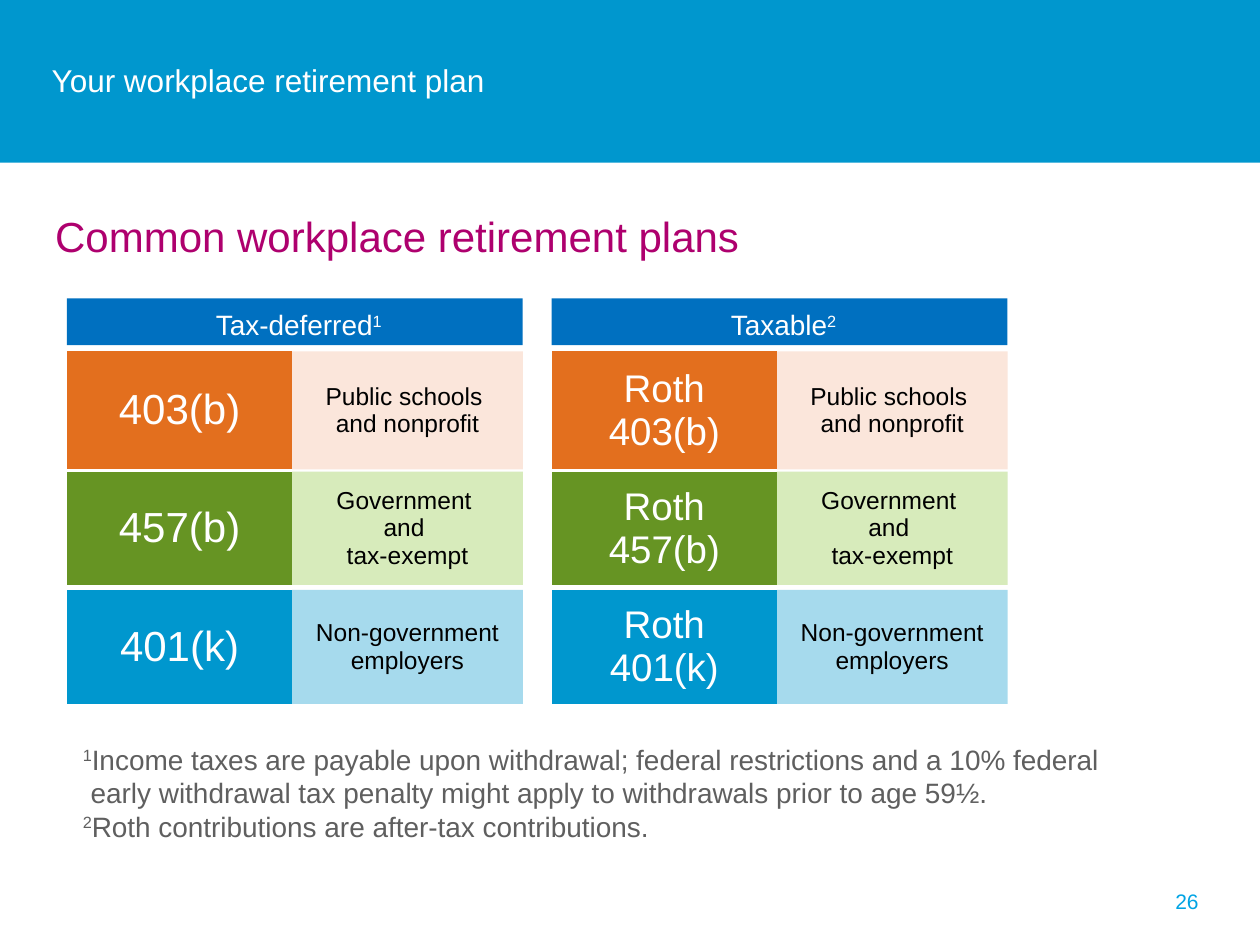
from lxml import etree
from pptx import Presentation
from pptx.dml.color import RGBColor
from pptx.enum import shapes, text
from pptx.oxml import ns
from pptx.util import Pt

COLORS = {
    "band": "0097CE", "white": "FFFFFF", "black": "000000", "heading": "AE006E",
    "header": "0070C0", "note": "5F5F5F", "number": "00A4E4",
    "orange": "E36F1E", "light orange": "ED834C",
    "green": "669423", "light green": "8DC63F",
}
NO_STYLE = "{2D5ABB26-0587-4C30-8999-92F81FD0307C}"
PLAN_W, GROUP_W = 128.75, 260.5
HEADER_H = 26.75

# top and height within a group, employers, plan fill, employer fill, opacity in %
ROWS = [
    (30.25, 67.5, "Public schools \vand nonprofit", "orange", "light orange", 20),
    (99, 64.75, "Government \vand \ntax-exempt", "green", "light green", 35),
    (166.5, 65.25, "Non-government employers", "band", "band", 35),
]
GROUPS = [
    (38.25, "Tax-deferred", "1", ["403(b)", "457(b)", "401(k)"], 24),
    (315.25, "Taxable", "2", ["Roth 403(b)", "Roth\n457(b)", "Roth 401(k)"], 22),
]
NOTES = [
    ("1", "Income taxes are payable upon withdrawal; federal restrictions and a 10% "
          "federal early withdrawal tax penalty might apply to withdrawals prior to "
          "age 59½."),
    ("2", "Roth contributions are after-tax contributions."),
]


def rgb(name):
    return RGBColor.from_string(COLORS[name])


def style(p, size, color, align=text.PP_ALIGN.LEFT):
    p.alignment = align
    p.font.name = "Arial"
    p.font.size = Pt(size)
    p.font.color.rgb = rgb(color)


def indent(p, left, first):
    pPr = p._p.get_or_add_pPr()
    pPr.set("marL", str(Pt(left)))
    pPr.set("indent", str(Pt(first)))


def add_run(p, words, raised=False):
    r = p.add_run()
    r.text = words
    if raised:
        r._r.get_or_add_rPr().set("baseline", "30000")


def add_rect(s, x, y, w, h, color):
    sp = s.shapes.add_shape(shapes.MSO_SHAPE.RECTANGLE, Pt(x), Pt(y), Pt(w), Pt(h))
    sp.shadow.inherit = False
    sp.fill.solid()
    sp.fill.fore_color.rgb = rgb(color)
    sp.line.fill.background()
    return sp


def add_textbox(s, x, y, w, h):
    tf = s.shapes.add_textbox(Pt(x), Pt(y), Pt(w), Pt(h)).text_frame
    tf.word_wrap = True
    return tf


def add_title_band(s, x, y, w, h):
    band = add_rect(s, x, y, w, h, "band")
    s.shapes._spTree.insert(2, band._element)  # behind the title
    title = s.shapes.title
    title.left, title.top = Pt(x + 29.5), Pt(y + 28)
    title.width, title.height = Pt(w - 57), Pt(35.25)
    tf = title.text_frame
    tf.text = "Your workplace retirement plan"
    tf.margin_left = 0
    tf.vertical_anchor = text.MSO_ANCHOR.MIDDLE
    style(tf.paragraphs[0], 18, "white")


def add_heading(s, x, y, w, h):
    tf = add_textbox(s, x, y, w, h)
    tf.margin_left = 0
    tf.text = "Common workplace retirement plans"
    style(tf.paragraphs[0], 24, "heading")


def fill_cell(cell, words, size, color, fill, opacity=100):
    cell.text = words
    cell.vertical_anchor = text.MSO_ANCHOR.MIDDLE
    cell.fill.solid()
    cell.fill.fore_color.rgb = rgb(fill)
    if opacity < 100:
        clr = cell._tc.tcPr.find(".//" + ns.qn("a:srgbClr"))
        etree.SubElement(clr, ns.qn("a:alpha")).set("val", str(opacity * 1000))
    for p in cell.text_frame.paragraphs:
        style(p, size, color, text.PP_ALIGN.CENTER)


def add_plan_row(s, x, y, w, h, plan, size, employers, dark, light, opacity):
    table = s.shapes.add_table(1, 2, Pt(x), Pt(y), Pt(w), Pt(h)).table
    table.first_row = table.horz_banding = False
    table._tbl.tblPr.find(ns.qn("a:tableStyleId")).text = NO_STYLE
    table.columns[0].width = Pt(PLAN_W)
    table.columns[1].width = Pt(w - PLAN_W)
    fill_cell(table.cell(0, 0), plan, size, "white", dark)
    fill_cell(table.cell(0, 1), employers, 14, "black", light, opacity)


def add_plan_group(s, x, y, w, name, mark, plans, size):
    """Header bar with one plan row per employer type below it."""
    tf = add_rect(s, x, y, w, HEADER_H, "header").text_frame
    tf.word_wrap = True
    tf.vertical_anchor = text.MSO_ANCHOR.TOP
    p = tf.paragraphs[0]
    indent(p, 18, -13.5)
    p.line_spacing = 1.1
    style(p, 16, "white", text.PP_ALIGN.CENTER)
    add_run(p, name)
    add_run(p, mark, raised=True)
    for plan, (top, h, *look) in zip(plans, ROWS):
        add_plan_row(s, x, y + top, w, h, plan, size, *look)


def add_notes(s, x, y, w, h):
    tf = add_textbox(s, x, y, w, h)
    for i, (mark, words) in enumerate(NOTES):
        p = tf.add_paragraph() if i else tf.paragraphs[0]
        indent(p, 4.5, -4.5)
        style(p, 16, "note")
        add_run(p, mark, raised=True)
        add_run(p, words)


def add_page_number(s, x, y, w, h):
    tf = add_textbox(s, x, y, w, h)
    tf.vertical_anchor = text.MSO_ANCHOR.MIDDLE
    tf.text = "26"
    style(tf.paragraphs[0], 12, "number", text.PP_ALIGN.RIGHT)


def main():
    prs = Presentation()
    prs.slide_width, prs.slide_height = Pt(720), Pt(540)
    s = prs.slides.add_slide(prs.slide_layouts[5])
    add_title_band(s, 0, 0, 720, 93)
    add_heading(s, 31.5, 116.75, 659.5, 40)
    for x, *group in GROUPS:
        add_plan_group(s, x, 170.5, GROUP_W, *group)
    add_notes(s, 40.25, 420.5, 595.5, 65.5)
    add_page_number(s, 524, 500.5, 168, 28.75)
    prs.save("out.pptx")


if __name__ == "__main__":
    main()
